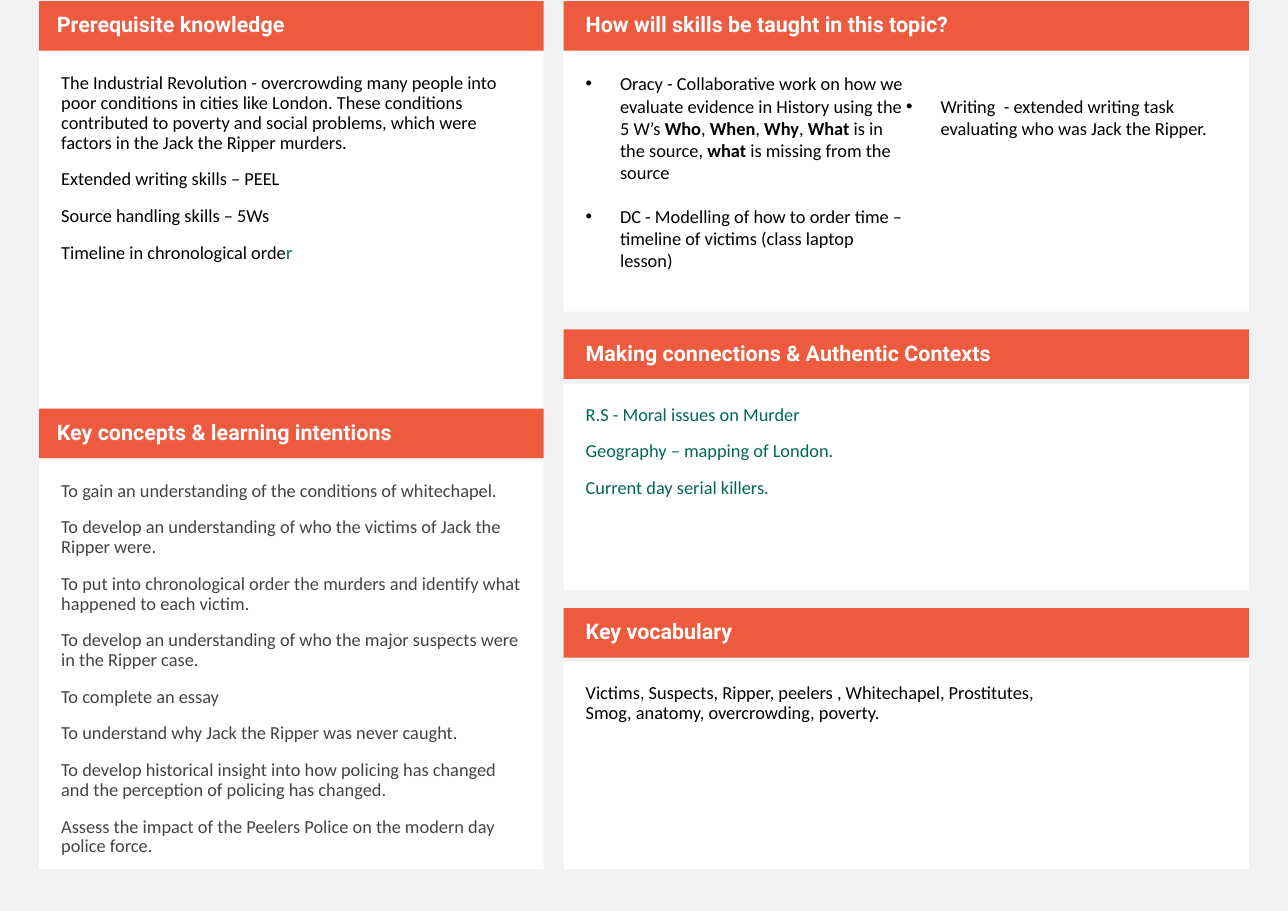
"""Build a one-page history topic overview with headed panels in two columns."""
from lxml.etree import SubElement
from pptx import Presentation
from pptx.dml.color import RGBColor
from pptx.enum.shapes import MSO_SHAPE as Shape
from pptx.enum.text import MSO_ANCHOR as Anchor, PP_ALIGN as Align
from pptx.oxml.ns import qn
from pptx.util import Pt

COLOURS = {
    "page": "F2F2F2",
    "panel": "FFFFFF",
    "header": "ED5A3E",
    "heading": "FFFFFF",
    "black": "000000",
    "grey": "444444",
    "green": "006758",
}
LEFT, LEFT_WIDTH = 25.6, 329.76
RIGHT, RIGHT_WIDTH = 368.3, 447.84
HEADER_HEIGHT = 32.4
INSET = 14.4
SKILL_WIDTH = (RIGHT_WIDTH - 2 * INSET) / 2
SKILLS_TOP = 33.12
SKILL_LINE = 14.65

PREREQUISITES = [
    [("The Industrial Revolution - overcrowding many people into poor conditions in "
      "cities like London. These conditions contributed to poverty and social problems, "
      "which were factors in the Jack the Ripper murders.", "black")],
    [("Extended writing skills – PEEL", "black")],
    [("Source handling skills – 5Ws", "black")],
    [("Timeline in chronological orde", "black"), ("r", "green")],
]
INTENTIONS = [
    "To gain an understanding of the conditions of whitechapel.",
    "To develop an understanding of who the victims of Jack the Ripper were.",
    "To put into chronological order the murders and identify what happened to each victim.",
    "To develop an understanding of who the major suspects were in the Ripper case.",
    "To complete an essay",
    "To understand why Jack the Ripper was never caught.",
    "To develop historical insight into how policing has changed and the perception of "
    "policing has changed.",
    "Assess the impact of the Peelers Police on the modern day police force.",
]
CONNECTIONS = [
    "R.S - Moral issues on Murder",
    "Geography – mapping of London.",
    "Current day serial killers.",
]
VOCABULARY = [
    "Victims, Suspects, Ripper, peelers , Whitechapel, Prostitutes, "
    "Smog, anatomy, overcrowding, poverty.",
]
ORACY = [
    ("Oracy - Collaborative work on how we evaluate evidence in History using the 5 W’s ",
     False),
    ("Who", True), (", ", False), ("When", True), (", ", False), ("Why", True),
    (", ", False), ("What", True), (" is in the source, ", False), ("what", True),
    (" is missing from the source", False),
]
TIMELINE = [
    ("DC - Modelling of how to order time – timeline of victims (class laptop lesson)", False),
]
WRITING = [
    ("Writing  - extended writing task evaluating who was Jack the Ripper.", False),
]


def colour(name):
    return RGBColor.from_string(COLOURS[name])


def set_frame(box, left, right, edge, anchor=Anchor.TOP):
    frame = box.text_frame
    frame.word_wrap = True
    frame.vertical_anchor = anchor
    frame.margin_left, frame.margin_right = Pt(left), Pt(right)
    frame.margin_top = frame.margin_bottom = Pt(edge)


def add_block(page, left, top, width, height, fill):
    box = page.shapes.add_shape(Shape.RECTANGLE, Pt(left), Pt(top), Pt(width), Pt(height))
    box.shadow.inherit = False
    box.fill.solid()
    box.fill.fore_color.rgb = colour(fill)
    box.line.fill.background()
    return box


def next_para(frame):
    para = frame.paragraphs[0] if not frame.paragraphs[0].runs else frame.add_paragraph()
    para.alignment = Align.LEFT
    return para


def add_run(para, text, tint, font="Calibri", size=12, bold=False):
    run = para.add_run()
    run.text = text
    run.font.name = font
    run.font.size = Pt(size)
    run.font.bold = bold
    run.font.color.rgb = colour(tint)


def add_body_para(frame):
    para = next_para(frame)
    para.line_spacing = 0.9
    para.space_before = Pt(11)
    return para


def add_header(page, left, top, width, text, inset):
    box = add_block(page, left, top, width, HEADER_HEIGHT, "header")
    set_frame(box, inset, 7.2, 3.6, Anchor.MIDDLE)
    add_run(add_body_para(box.text_frame), text, "heading", "Roboto", 14, True)


def add_panel(page, left, top, width, height, paragraphs, right_inset=INSET):
    box = add_block(page, left, top, width, height, "panel")
    set_frame(box, INSET, right_inset, INSET)
    for runs in paragraphs:
        para = add_body_para(box.text_frame)
        for text, tint in runs:
            add_run(para, text, tint)


def in_colour(texts, tint):
    return [[(text, tint)] for text in texts]


def add_bullet(frame, runs, space_before=0):
    para = next_para(frame)
    para.space_before = Pt(space_before)
    properties = para._p.get_or_add_pPr()
    properties.set("marL", str(Pt(22.5)))
    properties.set("indent", str(-Pt(22.5)))
    SubElement(properties, qn("a:buFont")).set("typeface", "Arial")
    SubElement(properties, qn("a:buChar")).set("char", "•")
    for text, bold in runs:
        add_run(para, text, "black", bold=bold)


def add_skills(page):
    panel = add_block(page, RIGHT, SKILLS_TOP, RIGHT_WIDTH, 170.64, "panel")
    set_frame(panel, INSET, INSET + SKILL_WIDTH, INSET)
    add_bullet(panel.text_frame, ORACY)
    add_bullet(panel.text_frame, TIMELINE, SKILL_LINE)
    writing = page.shapes.add_textbox(
        Pt(RIGHT + INSET + SKILL_WIDTH), Pt(SKILLS_TOP + INSET + SKILL_LINE),
        Pt(SKILL_WIDTH), Pt(2 * SKILL_LINE))
    set_frame(writing, 0, 0, 0)
    add_bullet(writing.text_frame, WRITING)


def main():
    deck = Presentation()
    deck.slide_width, deck.slide_height = Pt(841.68), Pt(595.44)
    page = deck.slides.add_slide(deck.slide_layouts[6])
    page.background.fill.solid()
    page.background.fill.fore_color.rgb = colour("page")

    add_panel(page, LEFT, 33.84, LEFT_WIDTH, 234, PREREQUISITES)
    add_panel(page, LEFT, 300.24, LEFT_WIDTH, 267.84, in_colour(INTENTIONS, "grey"))
    add_skills(page)
    add_panel(page, RIGHT, 250.56, RIGHT_WIDTH, 135.36, in_colour(CONNECTIONS, "green"))
    add_panel(page, RIGHT, 432.72, RIGHT_WIDTH, 135.36, in_colour(VOCABULARY, "black"), 120)

    for top, text in [(0.72, "Prerequisite knowledge"),
                      (267.12, "Key concepts & learning intentions")]:
        add_header(page, LEFT, top, LEFT_WIDTH, text, 11.52)
    for top, text in [(0.72, "How will skills be taught in this topic?"),
                      (215.28, "Making connections & Authentic Contexts"),
                      (397.44, "Key vocabulary")]:
        add_header(page, RIGHT, top, RIGHT_WIDTH, text, INSET)
    deck.save("out.pptx")


if __name__ == "__main__":
    main()
